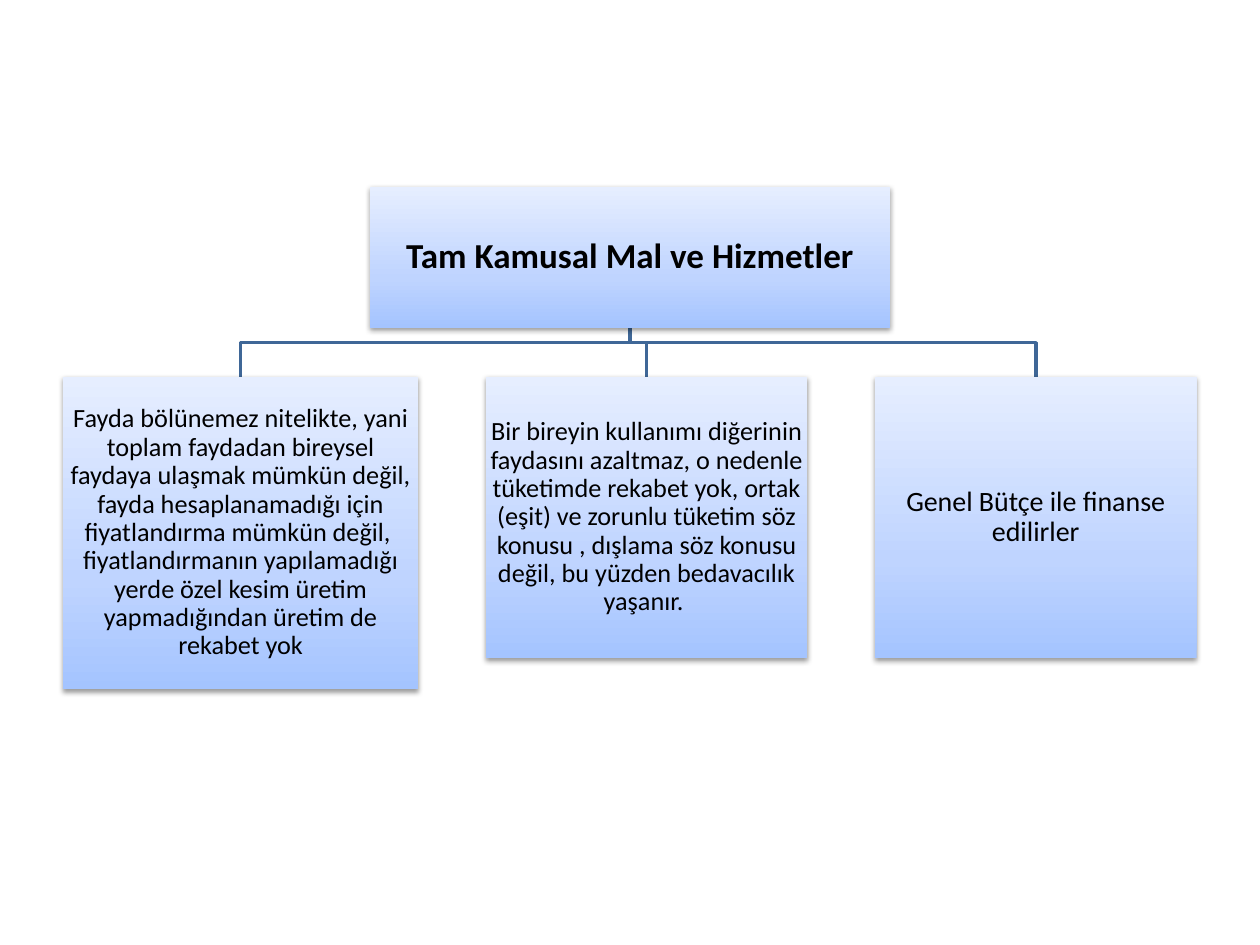
import copy

import pptx
import pptx.dml.color
import pptx.enum.shapes
import pptx.enum.text
import pptx.oxml
import pptx.oxml.ns
import pptx.util

Pt = pptx.util.Pt
RGB = pptx.dml.color.RGBColor.from_string
COLORS = {
    "bottom": "A4C4FF",
    "middle": "BFD4FF",
    "top": "E6EEFF",
    "branch": "3F6797",
    "text": "000000",
    "shadow": "000000",
}
GRADIENT = [(0, "bottom"), (0.35, "middle"), (1, "top")]
SHADOW = (
    f'<a:outerShdw {pptx.oxml.ns.nsdecls("a")} blurRad="{Pt(3.1)}" dist="{Pt(1.6)}" '
    'dir="5400000" rotWithShape="0">'
    f'<a:srgbClr val="{COLORS["shadow"]}"><a:alpha val="38000"/></a:srgbClr></a:outerShdw>'
)
FRAME_FORMAT = {
    "word_wrap": True,
    "vertical_anchor": pptx.enum.text.MSO_ANCHOR.MIDDLE,
    "margin_left": Pt(0.75),
    "margin_top": Pt(0.75),
    "margin_right": Pt(0.75),
    "margin_bottom": Pt(0.75),
}


def add_box(slide, left, top, width, height, text, size, bold):
    box = slide.shapes.add_shape(
        pptx.enum.shapes.MSO_SHAPE.RECTANGLE, Pt(left), Pt(top), Pt(width), Pt(height)
    )
    box.line.fill.background()
    box.fill.gradient()
    box.fill.gradient_angle = 90
    stop_list = box.element.spPr.find(".//" + pptx.oxml.ns.qn("a:gsLst"))
    stop_list.append(copy.deepcopy(stop_list[0]))
    for stop, (position, color) in zip(box.fill.gradient_stops, GRADIENT):
        stop.position = position
        stop.color.rgb = RGB(COLORS[color])
    box.shadow.inherit = False
    effects = box.element.spPr.find(pptx.oxml.ns.qn("a:effectLst"))
    effects.append(pptx.oxml.parse_xml(SHADOW))

    for name, value in FRAME_FORMAT.items():
        setattr(box.text_frame, name, value)
    paragraph = box.text_frame.paragraphs[0]
    paragraph.alignment = pptx.enum.text.PP_ALIGN.CENTER
    paragraph.line_spacing = 0.9
    run = paragraph.add_run()
    run.text = text
    for name, value in {"name": "Calibri", "size": Pt(size), "bold": bold}.items():
        setattr(run.font, name, value)
    run.font.color.rgb = RGB(COLORS["text"])


deck = pptx.Presentation()
deck.slide_width, deck.slide_height = Pt(720), Pt(540)
slide = deck.slides.add_slide(deck.slide_layouts[6])

goods_top, goods_width, goods_height = 106.6, 297.4, 80.6
goods_center, goods_bottom = 360, goods_top + goods_height
bar_y, features_top, gap = 195.9, 215.2, 38.6
features = [
    (
        203, 178.7, 15,
        "Fayda bölünemez nitelikte, yani toplam faydadan bireysel faydaya ulaşmak "
        "mümkün değil, fayda hesaplanamadığı için fiyatlandırma mümkün değil,  "
        "fiyatlandırmanın yapılamadığı yerde özel kesim üretim yapmadığından "
        "üretim de rekabet yok",
    ),
    (
        183.8, 160.8, 15,
        "Bir bireyin kullanımı diğerinin faydasını azaltmaz, o nedenle tüketimde "
        "rekabet yok, ortak (eşit) ve zorunlu tüketim söz konusu , dışlama söz "
        "konusu değil, bu yüzden bedavacılık yaşanır. ",
    ),
    (183.8, 160.8, 16, "Genel Bütçe ile finanse edilirler"),
]
lefts = [36]
for width, *_ in features[:-1]:
    lefts.append(lefts[-1] + width + gap)

for left, (width, *_) in zip(lefts, features):
    center = left + width / 2
    route = slide.shapes.build_freeform(Pt(goods_center), Pt(goods_bottom))
    route.add_line_segments(
        [
            (Pt(goods_center), Pt(bar_y)),
            (Pt(center), Pt(bar_y)),
            (Pt(center), Pt(features_top)),
        ],
        close=False,
    )
    branch = route.convert_to_shape()
    branch.fill.background()
    branch.line.color.rgb = RGB(COLORS["branch"])
    branch.line.width = Pt(2)
    branch.shadow.inherit = False

add_box(
    slide, goods_center - goods_width / 2, goods_top, goods_width, goods_height,
    "Tam Kamusal Mal ve Hizmetler", 20, True,
)
for left, (width, height, size, text) in zip(lefts, features):
    add_box(slide, left, features_top, width, height, text, size, False)

deck.save("out.pptx")
